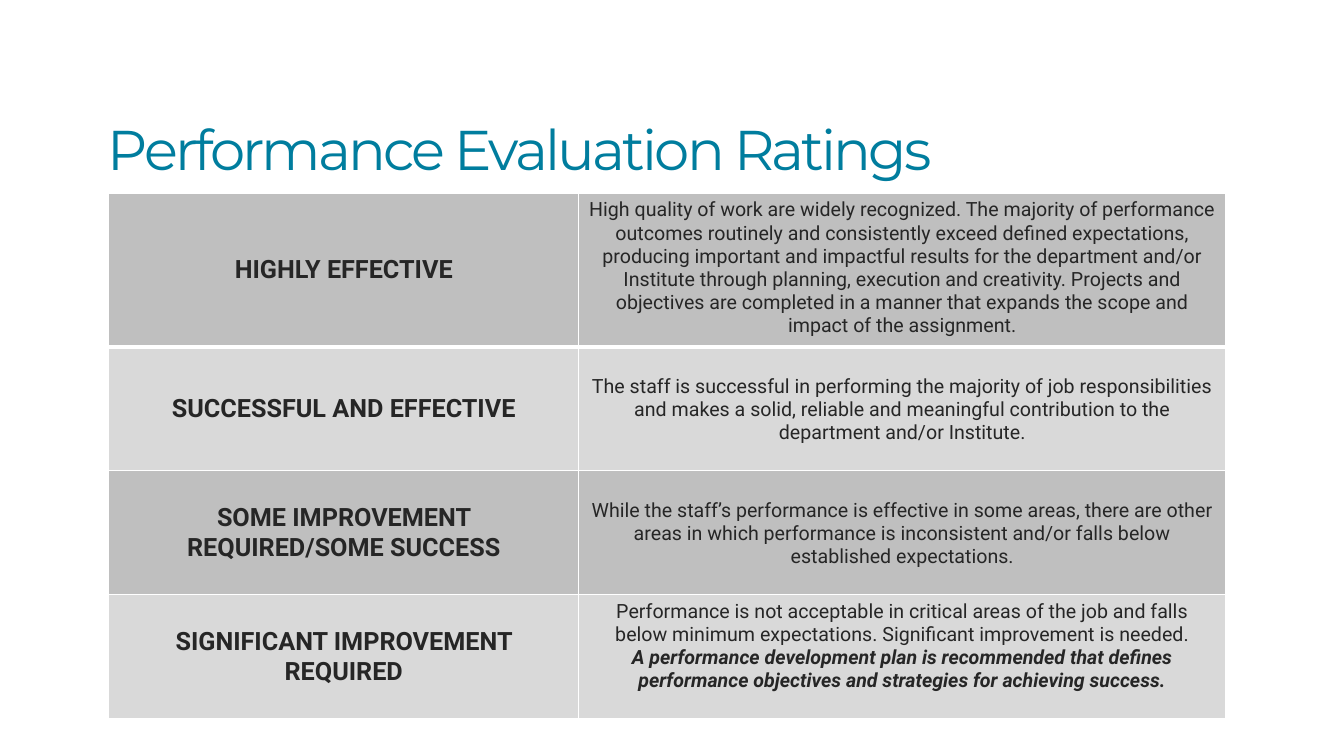
from dataclasses import dataclass

from lxml import etree
from pptx import Presentation
from pptx.dml.color import RGBColor as RGB
from pptx.enum.text import MSO_ANCHOR as ANCHOR, PP_ALIGN as ALIGN
from pptx.oxml.ns import qn
from pptx.util import Inches, Pt


@dataclass(frozen=True)
class Theme:
    title_font: str = "Montserrat"
    body_font: str = "Roboto"
    title: str = "007D9E"
    text: str = "262626"
    border: str = "FFFFFF"
    bands: tuple = ("BFBFBF", "D9D9D9")
    title_size: int = 40
    rating_size: int = 18
    body_size: int = 14


THEME = Theme()
COLUMNS = (4.66, 6.42)
ROWS = (1.52, 1.23, 1.23, 1.23)
PAD = 0.05
BODY_LINE = 0.23

# Rating, description paragraphs, lines left free above the description
RATINGS = [
    ("HIGHLY EFFECTIVE",
     ["High quality of work are widely recognized. The majority of performance "
      "outcomes routinely and consistently exceed defined expectations, producing "
      "important and impactful results for the department and/or Institute through "
      "planning, execution and creativity. Projects and objectives are completed in "
      "a manner that expands the scope and impact of the assignment."], 0),
    ("SUCCESSFUL AND EFFECTIVE",
     ["The staff is successful in performing the majority of job responsibilities "
      "and makes a solid, reliable and meaningful contribution to the department "
      "and/or Institute."], 1),
    ("SOME IMPROVEMENT REQUIRED/SOME SUCCESS",
     ["While the staff’s performance is effective in some areas, there are other "
      "areas in which performance is inconsistent and/or falls below established "
      "expectations."], 1),
    ("SIGNIFICANT IMPROVEMENT REQUIRED",
     ["Performance is not acceptable in critical areas of the job and falls below "
      "minimum expectations. Significant improvement is needed.",
      "A performance development plan is recommended that defines performance "
      "objectives and strategies for achieving success."], 0),
]


def add_run(p, text, color, **formats):
    r = p.add_run()
    r.text = text
    r.font.color.rgb = RGB.from_string(color)
    for name, value in formats.items():
        setattr(r.font, name, value)
    return r


def set_borders(cell, bottom):
    tcPr = cell._tc.get_or_add_tcPr()
    widths = {"a:lnL": 1, "a:lnR": 1, "a:lnT": 1, "a:lnB": bottom}
    for i, (tag, width) in enumerate(widths.items()):
        ln = etree.Element(qn(tag), w=str(Pt(width)))
        fill = etree.SubElement(ln, qn("a:solidFill"))
        etree.SubElement(fill, qn("a:srgbClr"), val=THEME.border)
        tcPr.insert(i, ln)


def fill_cell(cell, paragraphs, **formats):
    tf = cell.text_frame
    for i, text in enumerate(paragraphs):
        p = tf.paragraphs[0] if i == 0 else tf.add_paragraph()
        p.alignment = ALIGN.CENTER
        # A second paragraph is the emphasised advice
        style = {"name": THEME.body_font, "bold": i > 0, "italic": i > 0} | formats
        add_run(p, text, THEME.text, **style)


def add_title(slide, text, left, top, width, height):
    sp = slide.shapes.add_textbox(*map(Inches, (left, top, width, height)))
    tf = sp.text_frame
    tf.word_wrap = True
    tf.vertical_anchor = ANCHOR.MIDDLE
    p = tf.paragraphs[0]
    p.line_spacing = 0.9
    r = add_run(p, text, THEME.title, name=THEME.title_font,
                size=Pt(THEME.title_size))
    r.font._element.set("spc", "-200")  # tight letter spacing


def add_ratings(slide, left, top):
    box = map(Inches, (left, top, sum(COLUMNS), sum(ROWS)))
    table = slide.shapes.add_table(len(ROWS), len(COLUMNS), *box).table
    table.first_row = table.horz_banding = False
    for column, width in zip(table.columns, COLUMNS):
        column.width = Inches(width)

    for i, (rating, description, free_lines) in enumerate(RATINGS):
        table.rows[i].height = Inches(ROWS[i])
        name_cell, text_cell = table.rows[i].cells
        for cell in (name_cell, text_cell):
            cell.fill.solid()
            cell.fill.fore_color.rgb = RGB.from_string(THEME.bands[i % 2])
            set_borders(cell, bottom=3 if i == 0 else 1)
        name_cell.vertical_anchor = ANCHOR.MIDDLE
        fill_cell(name_cell, [rating], size=Pt(THEME.rating_size), bold=True)
        text_cell.margin_top = Inches(PAD + free_lines * BODY_LINE)
        fill_cell(text_cell, description, size=Pt(THEME.body_size))


def main():
    prs = Presentation()
    prs.slide_width, prs.slide_height = Inches(13.33), Inches(7.5)
    slide = prs.slides.add_slide(prs.slide_layouts[6])
    add_title(slide, "Performance Evaluation Ratings", 0.97, 0.75, 10.41, 1.53)
    add_ratings(slide, 1.08, 1.92)
    prs.save("out.pptx")


if __name__ == "__main__":
    main()
